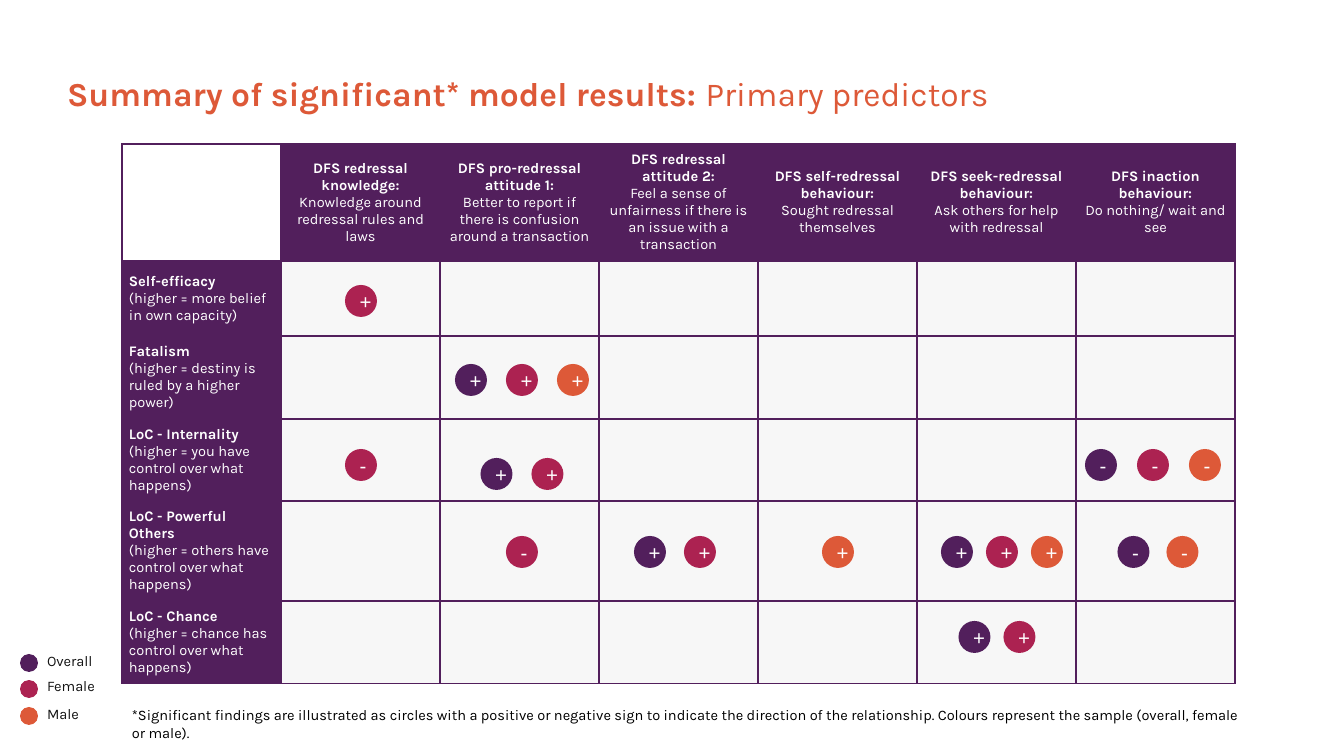
from dataclasses import dataclass

from lxml import etree
from pptx import Presentation
from pptx.dml.color import RGBColor
from pptx.enum.shapes import MSO_SHAPE as SHAPE
from pptx.enum.text import MSO_ANCHOR as ANCHOR, MSO_AUTO_SIZE as AUTO, PP_ALIGN as ALIGN
from pptx.oxml.ns import qn
from pptx.util import Pt

EMU_PER_PX = 914400 / 105


def px(n):
    return round(n * EMU_PER_PX)


@dataclass(frozen=True)
class Theme:
    overall: str = "521F5C"
    female: str = "AC2251"
    male: str = "DD5938"
    body: str = "F7F7F7"
    white: str = "FFFFFF"
    label: str = "141414"
    black: str = "000000"
    font: str = "Karla"
    sign_font: str = "Arial"
    title_size: int = 23
    text_size: int = 10
    sign_size: int = 14


THEME = Theme()

OUTCOMES = [
    ("DFS redressal knowledge:", "Knowledge around redressal rules and laws"),
    ("DFS pro-redressal attitude 1:", "Better to report if there is confusion around a transaction"),
    ("DFS redressal attitude 2:", "Feel a sense of unfairness if there is an issue with a transaction"),
    ("DFS self-redressal behaviour:", "Sought redressal themselves"),
    ("DFS seek-redressal behaviour:", "Ask others for help with redressal"),
    ("DFS inaction behaviour:", "Do nothing/ wait and see"),
]
PREDICTORS = [
    ("Self-efficacy", "(higher = more belief in own capacity)"),
    ("Fatalism", "(higher = destiny is ruled by a higher power)"),
    ("LoC - Internality", "(higher = you have control over what happens)"),
    ("LoC - Powerful Others", "(higher = others have control over what happens)"),
    ("LoC - Chance", "(higher = chance has control over what happens)"),
]
COL_WIDTH = 159
ROW_HEIGHTS = [117, 75, 83, 82, 100, 83]

OVERALL, FEMALE, MALE = THEME.overall, THEME.female, THEME.male
# centre x, centre y, spacing, samples, sign
FINDINGS = [
    (361, 301, 0, [FEMALE], "+"),
    (522, 380, 51, [OVERALL, FEMALE, MALE], "+"),
    (361, 465, 0, [FEMALE], "-"),
    (522, 474, 51, [OVERALL, FEMALE], "+"),
    (1153, 465, 52, [OVERALL, FEMALE, MALE], "-"),
    (522, 552, 0, [FEMALE], "-"),
    (675, 552, 50, [OVERALL, FEMALE], "+"),
    (838, 552, 0, [MALE], "+"),
    (1002, 552, 45, [OVERALL, FEMALE, MALE], "+"),
    (1158, 552, 49, [OVERALL, MALE], "-"),
    (997, 637, 45, [OVERALL, FEMALE], "+"),
]
# name, colour, circle centre y, label top
LEGEND = [("Overall", OVERALL, 663, 643), ("Female", FEMALE, 689, 668), ("Male", MALE, 716, 696)]
FOOTNOTE = (
    "*Significant findings are illustrated as circles with a positive or negative sign to indicate "
    "the direction of the relationship. Colours represent the sample (overall, female or male)."
)


class Deck:
    def __init__(self, theme):
        self.theme = theme
        self.prs = Presentation()
        self.prs.slide_width, self.prs.slide_height = px(1344), px(756)
        self.slide = self.prs.slides.add_slide(self.prs.slide_layouts[5])

    def style(self, p, color, size, font=None, bold=False):
        p.font.name = font or self.theme.font
        p.font.size = Pt(size)
        p.font.bold = bold
        p.font.color.rgb = RGBColor.from_string(color)

    def inset(self, frame, margin):
        """Set equal margins on a text frame or a table cell."""
        frame.margin_left = frame.margin_right = px(margin)
        frame.margin_top = frame.margin_bottom = px(margin)

    def title(self, strong, light, x, y, w, h):
        sp = self.slide.shapes.title
        sp.left, sp.top, sp.width, sp.height = px(x), px(y), px(w), px(h)
        tf = sp.text_frame
        self.inset(tf, 0)
        tf.vertical_anchor = ANCHOR.MIDDLE
        p = tf.paragraphs[0]
        p.alignment = ALIGN.LEFT
        self.style(p, self.theme.male, self.theme.title_size)
        for text, bold in ((strong, True), (light, False)):
            r = p.add_run()
            r.text = text
            r.font.bold = bold

    def text(self, text, x, y, w, h, color):
        tf = self.slide.shapes.add_textbox(px(x), px(y), px(w), px(h)).text_frame
        tf.word_wrap = True
        tf.auto_size = AUTO.SHAPE_TO_FIT_TEXT
        self.inset(tf, 10)
        tf.text = text
        self.style(tf.paragraphs[0], color, self.theme.text_size)

    def circle(self, cx, cy, size, color, sign=""):
        sp = self.slide.shapes.add_shape(
            SHAPE.OVAL, px(cx - size / 2), px(cy - size / 2), px(size), px(size))
        sp.shadow.inherit = False
        sp.fill.solid()
        sp.fill.fore_color.rgb = RGBColor.from_string(color)
        sp.line.fill.background()
        if sign:
            tf = sp.text_frame
            self.inset(tf, 10)
            tf.vertical_anchor = ANCHOR.MIDDLE
            tf.text = sign
            p = tf.paragraphs[0]
            p.alignment = ALIGN.LEFT
            self.style(p, self.theme.white, self.theme.sign_size, self.theme.sign_font)

    def borders(self, cell):
        tc_pr = cell._tc.get_or_add_tcPr()
        for i, side in enumerate(("lnL", "lnR", "lnT", "lnB")):
            ln = etree.Element(qn(f"a:{side}"), w=str(Pt(1)))
            fill = etree.SubElement(ln, qn("a:solidFill"))
            etree.SubElement(fill, qn("a:srgbClr"), val=self.theme.overall)
            tc_pr.insert(i, ln)

    def cell(self, cell, fill, lines=(), align=ALIGN.LEFT):
        """Fill a cell; the first line is a bold heading."""
        cell.fill.solid()
        cell.fill.fore_color.rgb = RGBColor.from_string(fill)
        self.borders(cell)
        self.inset(cell, 7)
        cell.vertical_anchor = ANCHOR.MIDDLE
        tf = cell.text_frame
        tf.text = "\n".join(lines)
        for i, p in enumerate(tf.paragraphs):
            p.alignment = align
            self.style(p, self.theme.white, self.theme.text_size, bold=i == 0)

    def matrix(self, x, y, columns, rows):
        """Draw a table with headings along the top and left and a blank body."""
        t = self.theme
        n_rows, n_cols = len(rows) + 1, len(columns) + 1
        table = self.slide.shapes.add_table(
            n_rows, n_cols, px(x), px(y), px(COL_WIDTH * n_cols), px(sum(ROW_HEIGHTS))).table
        table.first_row = table.horz_banding = False
        for col in table.columns:
            col.width = px(COL_WIDTH)
        for row, height in zip(table.rows, ROW_HEIGHTS):
            row.height = px(height)
        self.cell(table.cell(0, 0), t.white)
        for c, lines in enumerate(columns, 1):
            self.cell(table.cell(0, c), t.overall, lines, ALIGN.CENTER)
        for r, lines in enumerate(rows, 1):
            self.cell(table.cell(r, 0), t.overall, lines)
            for c in range(1, n_cols):
                self.cell(table.cell(r, c), t.body)

    def finding(self, cx, cy, gap, samples, sign):
        """Draw a centred row of signed circles, one per sample."""
        first = cx - gap * (len(samples) - 1) / 2
        for i, color in enumerate(samples):
            self.circle(first + i * gap, cy, 32, color, sign)


def main():
    deck = Deck(THEME)
    deck.title("Summary of significant* model results: ", "Primary predictors", 67, 30, 1210, 126)
    deck.matrix(122, 144, OUTCOMES, PREDICTORS)
    for finding in FINDINGS:
        deck.finding(*finding)
    for name, color, cy, top in LEGEND:
        deck.circle(29, cy, 18, color)
        deck.text(name, 37, top, 151, 39, THEME.label)
    deck.text(FOOTNOTE, 122, 696, 1130, 39, THEME.black)
    deck.prs.save("out.pptx")


if __name__ == "__main__":
    main()
